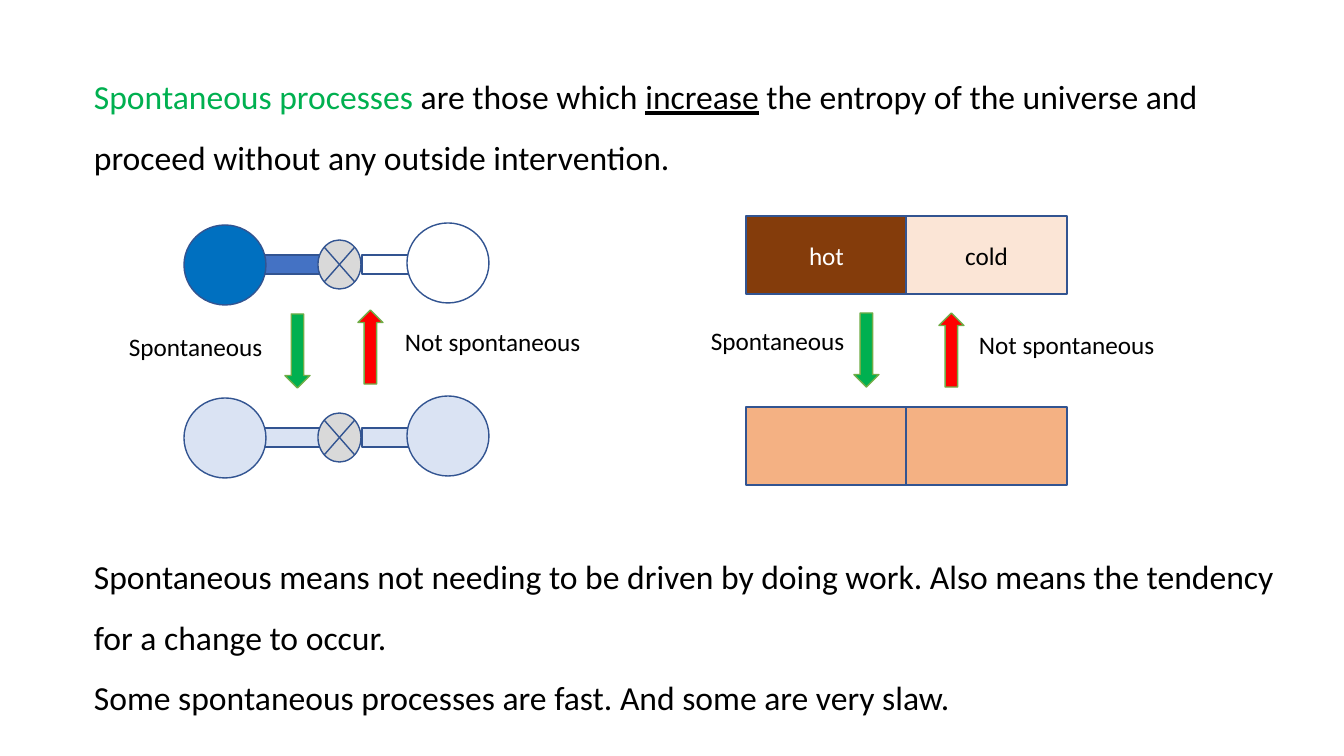
from pptx import Presentation
from pptx.dml.color import RGBColor
from pptx.enum.shapes import MSO_SHAPE
from pptx.enum.text import MSO_ANCHOR, MSO_AUTO_SIZE, PP_ALIGN
from pptx.util import Emu, Pt

COLORS = {
    "black": "000000", "white": "FFFFFF", "outline": "325491",
    "green": "00B050", "red": "FF0000", "arrow_outline": "70AD47",
    "gas": "0070C0", "gas_pipe": "4472C4", "mixed_gas": "DAE3F3",
    "valve": "D9D9D9", "hot": "843C0B", "cold": "FBE5D6", "warm": "F4B183",
}


class SlideBuilder:
    scale = 914400 / 100.8
    font_name = "Calibri"

    def __init__(self, presentation):
        presentation.slide_width = self.px(1344)
        presentation.slide_height = self.px(756)
        self.slide = presentation.slides.add_slide(presentation.slide_layouts[6])

    def px(self, length):
        return Emu(round(length * self.scale))

    def color(self, name):
        return RGBColor.from_string(COLORS[name])

    def set_font(self, paragraph, size, color):
        paragraph.font.name = self.font_name
        paragraph.font.size = Pt(size)
        if color:
            paragraph.font.color.rgb = self.color(color)

    def shape(self, kind, left, top, width, height, fill, line="outline"):
        shape = self.slide.shapes.add_shape(
            kind, *map(self.px, (left, top, width, height)))
        shape.shadow.inherit = False
        shape.fill.solid()
        shape.fill.fore_color.rgb = self.color(fill)
        shape.line.color.rgb = self.color(line)
        shape.line.width = Pt(1)
        return shape

    def block(self, left, top, fill, text="", text_color="black"):
        shape = self.shape(MSO_SHAPE.RECTANGLE, left, top, 161, 78, fill)
        if text:
            shape.text_frame.vertical_anchor = MSO_ANCHOR.MIDDLE
            paragraph = shape.text_frame.paragraphs[0]
            paragraph.text = text
            paragraph.alignment = PP_ALIGN.CENTER
            self.set_font(paragraph, 18, text_color)

    def arrow(self, kind, left, top, fill):
        self.shape(kind, left, top, 25, 74, fill, "arrow_outline")

    def flasks(self, top, left_gas, left_pipe, right_gas):
        self.shape(MSO_SHAPE.RECTANGLE, 362, top + 32, 101, 19, right_gas)
        self.shape(MSO_SHAPE.RECTANGLE, 235, top + 32, 101, 19, left_pipe)
        self.shape(MSO_SHAPE.OVAL, 184, top + 2, 82, 80, left_gas)
        self.shape(MSO_SHAPE.FLOWCHART_SUMMING_JUNCTION, 318, top + 17, 43, 49, "valve")
        self.shape(MSO_SHAPE.OVAL, 407, top, 82, 80, right_gas)

    def text_box(self, left, top, width, height, wrap=True):
        box = self.slide.shapes.add_textbox(
            *map(self.px, (left, top, width, height)))
        box.text_frame.word_wrap = wrap
        box.text_frame.auto_size = MSO_AUTO_SIZE.SHAPE_TO_FIT_TEXT
        return box.text_frame

    def label(self, left, top, width, text):
        paragraph = self.text_box(left, top, width, 40, wrap=False).paragraphs[0]
        paragraph.text = text
        self.set_font(paragraph, 18, "black")

    def definition(self, left, top, width, height, parts):
        paragraph = self.text_box(left, top, width, height).paragraphs[0]
        paragraph.line_spacing = 1.5
        self.set_font(paragraph, 24, None)
        for text, color, underline in parts:
            run = paragraph.add_run()
            run.text = text
            run.font.color.rgb = self.color(color)
            if underline:
                run.font.underline = True

    def body(self, left, top, width, height, lines):
        frame = self.text_box(left, top, width, height)
        frame.text = "\n".join(lines)
        for paragraph in frame.paragraphs:
            paragraph.line_spacing = 1.5
            self.set_font(paragraph, 24, "black")


def main():
    presentation = Presentation()
    builder = SlideBuilder(presentation)

    builder.definition(84, 51, 1177, 126, [
        ("Spontaneous processes ", "green", False),
        ("are those which ", "black", False),
        ("increase", "black", True),
        (" the entropy of the universe and proceed without any outside intervention.",
         "black", False),
    ])

    builder.flasks(223, "gas", "gas_pipe", "white")
    builder.flasks(396, "mixed_gas", "mixed_gas", "mixed_gas")

    builder.block(746, 216, "hot", "hot", "white")
    builder.block(906, 216, "cold", "cold")
    for left in (746, 906):
        builder.block(left, 407, "warm")

    for left, top in ((285, 314), (854, 313)):
        builder.arrow(MSO_SHAPE.DOWN_ARROW, left, top, "green")
    for left, top in ((358, 310), (939, 313)):
        builder.arrow(MSO_SHAPE.UP_ARROW, left, top, "red")

    for left, top in ((119, 326), (701, 320)):
        builder.label(left, top, 155, "Spontaneous")
    for left, top in ((395, 321), (969, 324)):
        builder.label(left, top, 198, "Not spontaneous")

    builder.body(84, 531, 1204, 187, [
        "Spontaneous means not needing to be driven by doing work. "
        "Also means the tendency for a change to occur.",
        "Some spontaneous processes are fast. And some are very slaw.",
    ])

    presentation.save("out.pptx")


if __name__ == "__main__":
    main()
